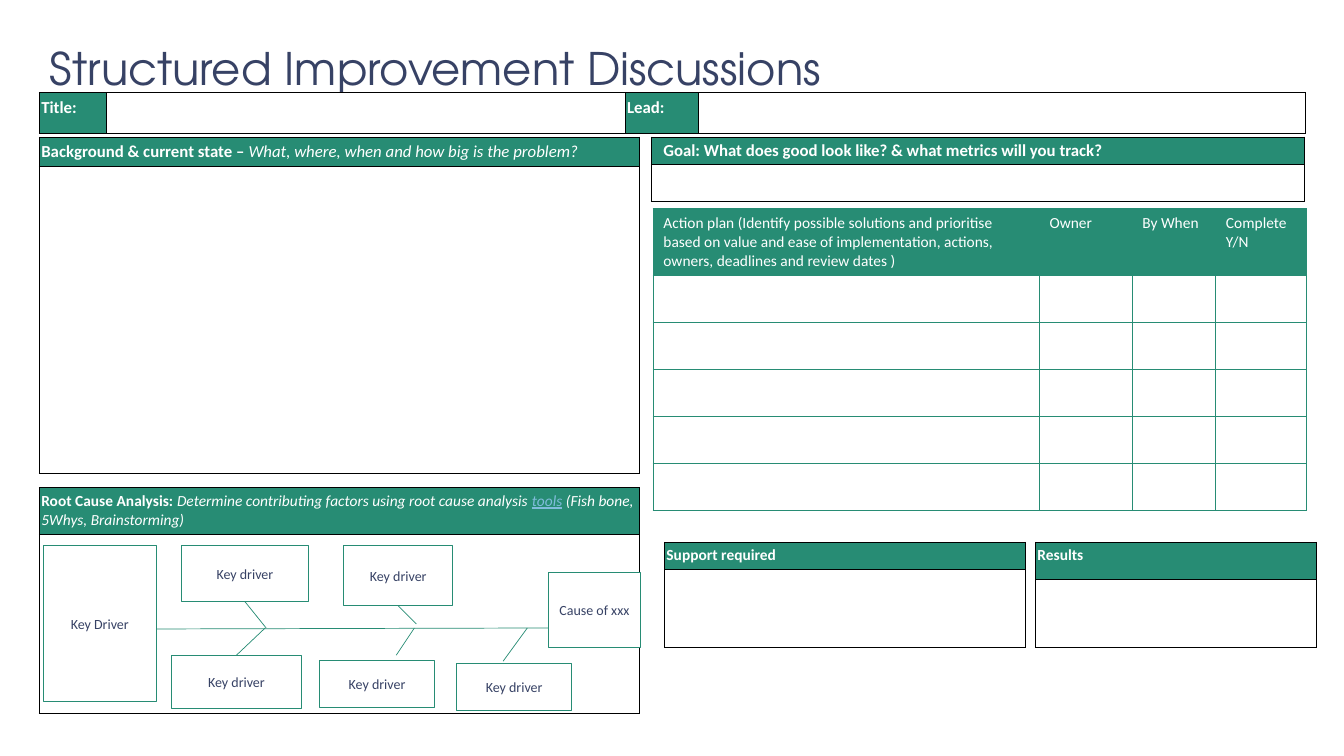
from lxml import etree
from pptx import Presentation
from pptx.dml.color import RGBColor
from pptx.enum.shapes import MSO_CONNECTOR as Connector, MSO_SHAPE as Shape
from pptx.enum.text import MSO_ANCHOR as Anchor, PP_ALIGN as Align
from pptx.oxml.ns import qn
from pptx.util import Inches, Pt

GREEN = RGBColor(0x27, 0x8C, 0x74)
NAVY = RGBColor(0x37, 0x42, 0x65)
WHITE = RGBColor(0xFF, 0xFF, 0xFF)
BLACK = RGBColor(0, 0, 0)
LINK = RGBColor(0x80, 0xBC, 0xDB)
BODY_FONT = "Calibri"

LEFT, HALF = 0.39, 5.95
SPINE_Y = 6.23

deck = Presentation()
deck.slide_width, deck.slide_height = Inches(13.33), Inches(7.5)
page = deck.slides.add_slide(deck.slide_layouts[5])


def add_grid(left, top, columns, rows, labels, size, bold=True,
             inset=(0.02, 0.03), border=(BLACK, 0.67)):
    frame = page.shapes.add_table(len(rows), len(columns), Inches(left), Inches(top),
                                  Inches(sum(columns)), Inches(sum(rows)))
    table = frame.table
    table.first_row = table.horz_banding = False
    for column, width in zip(table.columns, columns):
        column.width = Inches(width)
    for row, height in zip(table.rows, rows):
        row.height = Inches(height)
    for cell in table.iter_cells():
        cell.margin_left = cell.margin_right = Inches(inset[0])
        cell.margin_top = cell.margin_bottom = Inches(inset[1])
        cell.fill.solid()
        cell.fill.fore_color.rgb = WHITE
        properties = cell._tc.get_or_add_tcPr()
        for position, side in enumerate(("lnL", "lnR", "lnT", "lnB")):
            line = etree.Element(qn(f"a:{side}"), w=str(Pt(border[1])))
            fill = etree.SubElement(line, qn("a:solidFill"))
            etree.SubElement(fill, qn("a:srgbClr"), val=str(border[0]))
            properties.insert(position, line)
    for column, spans in labels.items():
        cell = table.cell(0, column)
        cell.fill.fore_color.rgb = GREEN
        para = cell.text_frame.paragraphs[0]
        for index, text in enumerate(spans):
            span = para.add_run()
            span.text = text
            span.font.name, span.font.size = BODY_FONT, Pt(size)
            span.font.color.rgb = WHITE
            span.font.bold = bold and index == 0
            span.font.italic = index > 0
    return table


def add_line(start, end):
    line = page.shapes.add_connector(Connector.STRAIGHT, *map(Inches, start + end))
    line.line.color.rgb = GREEN
    line.line.width = Pt(0.5)
    etree.SubElement(line._element.spPr, qn("a:effectLst"))
    return line


title = page.shapes.title
title.left, title.top = Inches(LEFT), Inches(0.35)
title.width, title.height = Inches(9.52), Inches(0.64)
title.text_frame.text = "Structured Improvement Discussions"
title.text_frame.vertical_anchor = Anchor.MIDDLE
heading = title.text_frame.paragraphs[0]
heading.alignment = Align.LEFT
heading_font = heading.runs[0].font
heading_font.name, heading_font.size = "TeX Gyre Adventor", Pt(32)
heading_font.color.rgb = NAVY

add_grid(LEFT, 0.92, [0.67, 5.14, 0.73, 6.02], [0.4],
         {0: ["Title:"], 2: ["Lead:"]}, 12, inset=(0.02, 0.05))
add_grid(LEFT, 1.36, [HALF], [0.29, 3.05],
         {0: ["Background & current state – ",
              "What, where, when and how big is the problem?"]}, 12, inset=(0.02, 0.04))
goal = add_grid(6.46, 1.36, [6.48], [0.27, 0.37],
                {0: ["Goal: What does good look like? & what metrics will you track?"]}, 12)
goal.cell(0, 0).margin_left = Inches(0.12)
causes = add_grid(LEFT, 4.84, [HALF], [0.45, 1.78],
                  {0: ["Root Cause Analysis: ",
                       "Determine contributing factors using root cause analysis ",
                       "tools", " (Fish bone, 5Whys, Brainstorming)"]}, 11,
                  inset=(0.02, 0.04))
tools = causes.cell(0, 0).text_frame.paragraphs[0].runs[2].font
tools.color.rgb = LINK
tools.underline = True
add_grid(6.48, 2.07, [3.83, 0.92, 0.83, 0.9], [0.65] + [0.465] * 5,
         {0: ["Action plan (Identify possible solutions and prioritise based on value and "
              "ease of implementation, actions, owners, deadlines and review dates )"],
          1: ["Owner"], 2: ["By When"], 3: ["Complete Y/N"]},
         11, bold=False, inset=(0.1, 0.05), border=(GREEN, 1))
add_grid(6.59, 5.38, [3.58], [0.27, 0.77], {0: ["Support required"]}, 11)
add_grid(10.27, 5.38, [2.79], [0.37, 0.67], {0: ["Results"]}, 11)

add_line((1.55, 6.24), (5.46, SPINE_Y))

drivers = [
    ("Key Driver", 0.43, 5.41, 1.12, 1.55),
    ("Key driver", 1.8, 5.41, 1.26, 0.56),
    ("Key driver", 3.41, 5.41, 1.08, 0.6),
    ("Key driver", 1.7, 6.5, 1.29, 0.53),
    ("Key driver", 3.17, 6.55, 1.14, 0.47),
    ("Key driver", 4.53, 6.58, 1.14, 0.47),
    ("Cause of xxx", 5.44, 5.68, 0.91, 0.74),
]
boxes = []
for label, *place in drivers:
    box = page.shapes.add_shape(Shape.RECTANGLE, *map(Inches, place))
    box.shadow.inherit = False
    box.fill.solid()
    box.fill.fore_color.rgb = WHITE
    box.line.color.rgb = GREEN
    box.line.width = Pt(0.75)
    box.text_frame.text = label
    box.text_frame.word_wrap = True
    box.text_frame.vertical_anchor = Anchor.MIDDLE
    para = box.text_frame.paragraphs[0]
    para.alignment = Align.CENTER
    font = para.runs[0].font
    font.name, font.size = BODY_FONT, Pt(10)
    font.color.rgb = NAVY
    boxes.append(box)

ribs = [
    ((2.43, 5.97), (2.64, SPINE_Y), boxes[1], 2),
    ((3.95, 6.01), (4.13, 6.19), boxes[2], 2),
    ((2.35, 6.5), (2.63, SPINE_Y), boxes[3], 0),
    ((3.93, 6.5), (4.11, SPINE_Y), None, 0),
    ((4.99, 6.56), (5.23, SPINE_Y), None, 0),
]
for start, end, box, side in ribs:
    rib = add_line(start, end)
    if box:
        rib.begin_connect(box, side)

deck.save("out.pptx")
